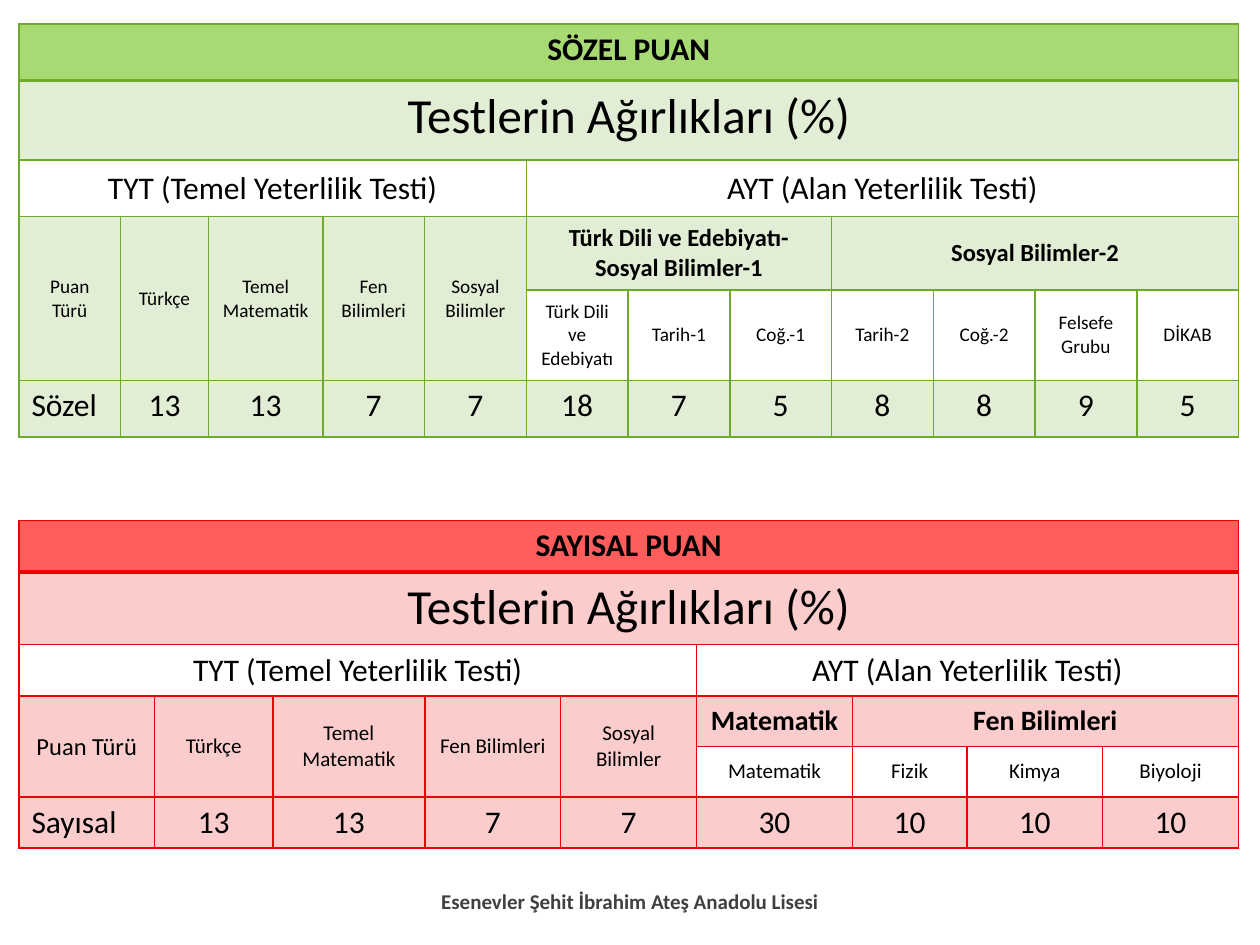
from lxml import etree
from pptx import Presentation
from pptx.dml.color import RGBColor
from pptx.enum.text import MSO_ANCHOR, PP_ALIGN
from pptx.oxml.ns import qn
from pptx.util import Inches, Pt

LEFT, CENTER = PP_ALIGN.LEFT, PP_ALIGN.CENTER
TOP, MIDDLE = MSO_ANCHOR.TOP, MSO_ANCHOR.MIDDLE
BLACK = RGBColor(0x00, 0x00, 0x00)
GRAY = RGBColor(0x40, 0x40, 0x40)
GREEN = RGBColor(0x6D, 0xAA, 0x2D)
LIME = RGBColor(0xA8, 0xDA, 0x73)
RED = RGBColor(0xEF, 0x00, 0x00)
CORAL = RGBColor(0xFF, 0x5C, 0x5C)
FONT = "Calibri"
EDGE, WIDTH = 0.15, 9.68
TINT = 20  # percent opacity of shaded cells

HEADING = "Testlerin Ağırlıkları (%)"
BASIC = "TYT (Temel Yeterlilik Testi)"
FIELD = "AYT (Alan Yeterlilik Testi)"
TESTS = ["Puan Türü", "Türkçe", "Temel Matematik", "Fen Bilimleri", "Sosyal Bilimler"]
SCHOOL = "Esenevler Şehit İbrahim Ateş Anadolu Lisesi"

TABLES = [
    {
        "title": "SÖZEL PUAN", "top": 0.19, "main": GREEN, "head": LIME,
        "cols": [0.81, 0.7, 0.91] + [0.81] * 9,
        "rows": [0.45, 0.63, 0.45, 0.58, 0.72, 0.45],
        "groups": [
            ("Türk Dili ve Edebiyatı- Sosyal Bilimler-1",
             ["Türk Dili ve Edebiyatı", "Tarih-1", "Coğ.-1"]),
            ("Sosyal Bilimler-2", ["Tarih-2", "Coğ.-2", "Felsefe Grubu", "DİKAB"]),
        ],
        "scores": ["Sözel", 13, 13, 7, 7, 18, 7, 5, 8, 8, 9, 5],
        "type_size": 11, "test_size": 11, "group_size": 14,
    },
    {
        "title": "SAYISAL PUAN", "top": 4.13, "main": RED, "head": CORAL,
        "cols": [1.08, 0.94, 1.21, 1.08, 1.08, 1.24, 0.91, 1.08, 1.08],
        "rows": [0.41, 0.57, 0.41, 0.4, 0.4, 0.4],
        "groups": [
            ("Matematik", ["Matematik"]),
            ("Fen Bilimleri", ["Fizik", "Kimya", "Biyoloji"]),
        ],
        "scores": ["Sayısal", 13, 13, 7, 7, 30, 10, 10, 10],
        "type_size": 14, "test_size": 12, "group_size": 16,
    },
]


def write(frame, text, size, bold=False, color=BLACK, align=CENTER):
    para = frame.paragraphs[0]
    para.alignment = align
    run = para.add_run()
    run.text = text
    font = run.font
    font.name, font.size, font.bold = FONT, Pt(size), bold
    font.color.rgb = color


def border(cell, color, row):
    """Line all four sides; the rule below the title row is doubled."""
    props = cell._tc.get_or_add_tcPr()
    thick = {"lnB": row == 0, "lnT": row == 1}
    for side in ("lnL", "lnR", "lnT", "lnB"):
        points = 2 if thick.get(side) else 1
        line = etree.SubElement(props, qn("a:" + side), w=str(Pt(points)))
        fill = etree.SubElement(line, qn("a:solidFill"))
        etree.SubElement(fill, qn("a:srgbClr"), val=str(color))


def shade(cell, color, opacity=100):
    cell.fill.solid()
    cell.fill.fore_color.rgb = color
    if opacity < 100:
        tone = cell._tc.tcPr.find(qn("a:solidFill")).find(qn("a:srgbClr"))
        etree.SubElement(tone, qn("a:alpha"), val=str(opacity * 1000))


def layout(data):
    """List cells as row, column, row span, column span, text, size, bold, shaded."""
    total, basic = len(data["cols"]), len(TESTS)
    cells = [
        (0, 0, 1, total, data["title"], 18, True, True),
        (1, 0, 1, total, HEADING, 28, False, True),
        (2, 0, 1, basic, BASIC, 18, False, False),
        (2, basic, 1, total - basic, FIELD, 18, False, False),
    ]
    for col, name in enumerate(TESTS):
        size = data["test_size"] if col else data["type_size"]
        cells.append((3, col, 2, 1, name, size, False, True))
    col = basic
    for group, parts in data["groups"]:
        cells.append((3, col, 1, len(parts), group, data["group_size"], True, True))
        for part in parts:
            cells.append((4, col, 1, 1, part, data["test_size"], False, False))
            col += 1
    for col, score in enumerate(data["scores"]):
        cells.append((5, col, 1, 1, str(score), 18, False, True))
    return cells


def add_scores(slide, data):
    rows, cols = data["rows"], data["cols"]
    table = slide.shapes.add_table(
        len(rows), len(cols), Inches(EDGE), Inches(data["top"]),
        Inches(WIDTH), Inches(sum(rows))).table
    table.first_row = table.horz_banding = False
    for col, width in zip(table.columns, cols):
        col.width = Inches(width * WIDTH / sum(cols))
    for row, height in zip(table.rows, rows):
        row.height = Inches(height)
    for r in range(len(rows)):
        for c in range(len(cols)):
            border(table.cell(r, c), data["main"], r)
            table.cell(r, c).fill.background()
    for r, c, down, across, text, size, bold, shaded in layout(data):
        cell = table.cell(r, c)
        if down * across > 1:
            cell.merge(table.cell(r + down - 1, c + across - 1))
        if r == 0:
            shade(cell, data["head"])
        elif shaded:
            shade(cell, data["main"], TINT)
        cell.vertical_anchor = MIDDLE if r in (2, 3, 4) else TOP
        align = LEFT if (r, c) == (5, 0) else CENTER
        write(cell.text_frame, text, size, bold, align=align)


def main():
    deck = Presentation()
    deck.slide_width, deck.slide_height = Inches(10), Inches(7.5)
    slide = deck.slides.add_slide(deck.slide_layouts[6])
    for data in TABLES:
        add_scores(slide, data)
    footer = slide.shapes.add_textbox(
        Inches(3.31), Inches(6.95), Inches(3.38), Inches(0.4)).text_frame
    footer.word_wrap = True
    footer.vertical_anchor = MIDDLE
    write(footer, SCHOOL, 12, True, GRAY)
    deck.save("out.pptx")


if __name__ == "__main__":
    main()
